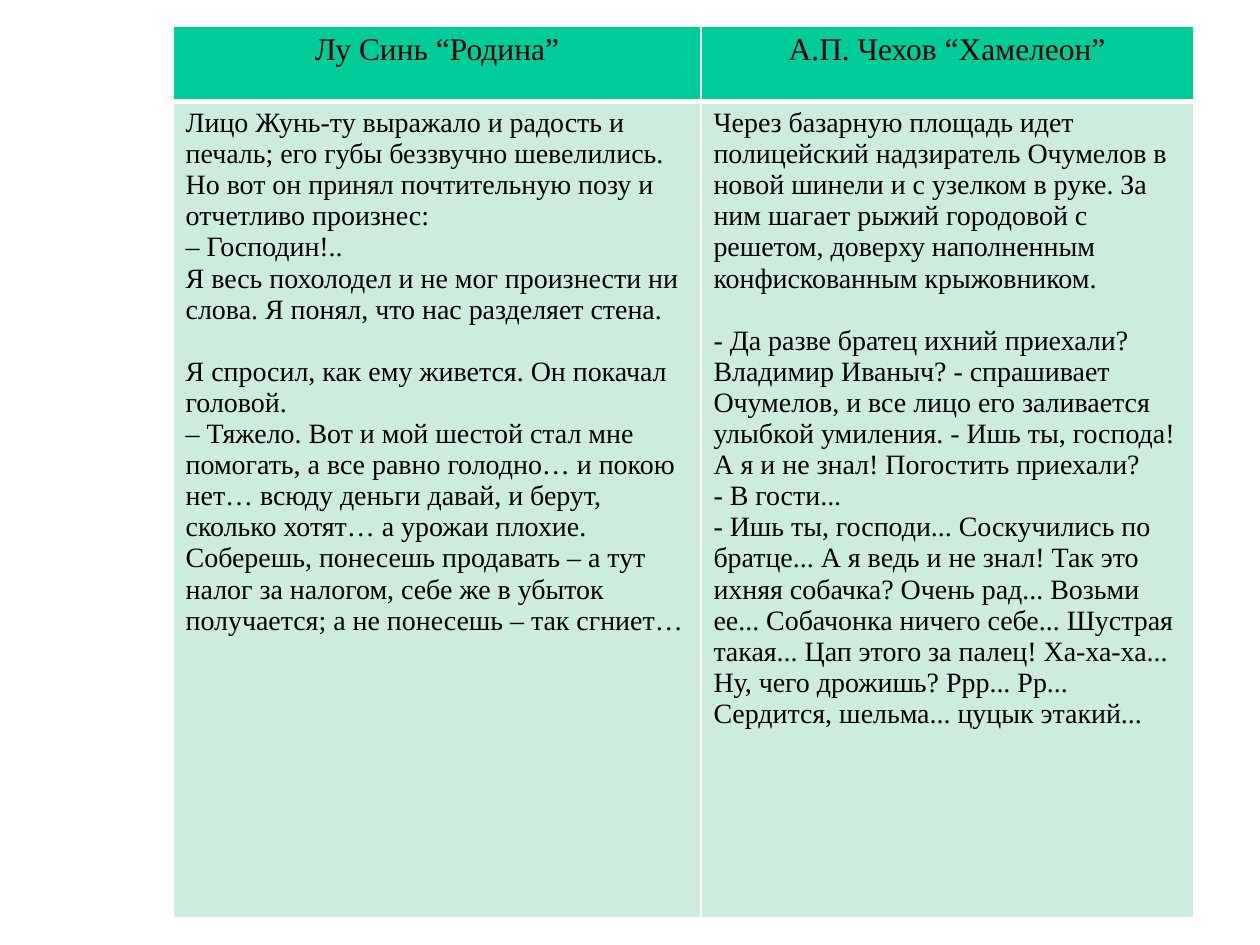
from pptx import Presentation
from pptx.dml.color import RGBColor as Rgb
from pptx.enum.text import PP_ALIGN as Align
from pptx.oxml.ns import qn
from pptx.util import Cm, Pt
from lxml.etree import SubElement as Sub

HEADS = ["Лу Синь “Родина”", "А.П. Чехов “Хамелеон”"]
LEFT = [
    ["Лицо Жунь-ту выражало и радость и печаль; его губы беззвучно шевелились. "
     "Но вот он принял почтительную позу и отчетливо произнес:",
     "– Господин!..",
     "Я весь похолодел и не мог произнести ни слова. Я понял, что нас разделяет стена."],
    ["Я спросил, как ему живется. Он покачал головой.",
     "– Тяжело. Вот и мой шестой стал мне помогать, а все равно голодно… и покою нет… "
     "всюду деньги давай, и берут, сколько хотят… а урожаи плохие. Соберешь, понесешь "
     "продавать – а тут налог за налогом, себе же в убыток получается; "
     "а не понесешь – так сгниет…"],
]
RIGHT = [
    ["Через базарную площадь идет полицейский надзиратель Очумелов в новой шинели "
     "и с узелком в руке. За ним шагает рыжий городовой с решетом, доверху "
     "наполненным конфискованным крыжовником."],
    ["- Да разве братец ихний приехали? Владимир Иваныч? - спрашивает Очумелов, "
     "и все лицо его заливается улыбкой умиления. - Ишь ты, господа! А я и не знал! "
     "Погостить приехали?",
     "- В гости...",
     "- Ишь ты, господи... Соскучились по братце... А я ведь и не знал! Так это ихняя "
     "собачка? Очень рад... Возьми ее... Собачонка ничего себе... Шустрая такая... "
     "Цап этого за палец! Ха-ха-ха... Ну, чего дрожишь? Ррр... Рр... "
     "Сердится, шельма... цуцык этакий..."],
]
HEAD = {"fill": "00CC99", "size": 18, "align": Align.CENTER, "thick": "lnB"}
BODY = {"fill": "CCECDE", "size": 16, "align": Align.LEFT, "thick": "lnT"}
FONT = {"name": "Times New Roman", "bold": False}
GAP = 17.8


def paint(fill, hue):
    fill.solid()
    fill.fore_color.rgb = Rgb.from_string(hue)


def edge(cell, thick):
    props = cell._tc.get_or_add_tcPr()
    for side in ("lnL", "lnR", "lnT", "lnB"):
        line = Sub(props, qn("a:" + side), w=str(Pt(3 if side == thick else 1)))
        Sub(Sub(line, qn("a:solidFill")), qn("a:srgbClr"), val="FFFFFF")


def write(cell, parts, look):
    edge(cell, look["thick"])
    paint(cell.fill, look["fill"])
    lines = [(text, part > 0 and row == 0)
             for part, texts in enumerate(parts) for row, text in enumerate(texts)]
    frame = cell.text_frame
    for num, (text, gap) in enumerate(lines):
        para = frame.add_paragraph() if num else frame.paragraphs[0]
        para.alignment = look["align"]
        if gap:
            para.space_before = Pt(GAP)
        run = para.add_run()
        run.text = text
        for key, val in {**FONT, "size": Pt(look["size"])}.items():
            setattr(run.font, key, val)
        paint(run.font.fill, "000000")


def compare(slide, left, top, wide, high):
    grid = slide.shapes.add_table(2, 2, Cm(left), Cm(top), Cm(wide), Cm(high)).table
    first, head = 10.64, 1.52
    for col, size in zip(grid.columns, (first, wide - first)):
        col.width = Cm(size)
    for row, size in zip(grid.rows, (head, high - head)):
        row.height = Cm(size)
    for col, (title, parts) in enumerate(zip(HEADS, (LEFT, RIGHT))):
        write(grid.cell(0, col), [[title]], HEAD)
        write(grid.cell(1, col), parts, BODY)


def main():
    deck = Presentation()
    deck.slide_width, deck.slide_height = Cm(25.4), Cm(19.05)
    slide = deck.slides.add_slide(deck.slide_layouts[6])
    compare(slide, 3.49, 0.52, 20.57, 17.99)
    deck.save("out.pptx")


if __name__ == "__main__":
    main()
